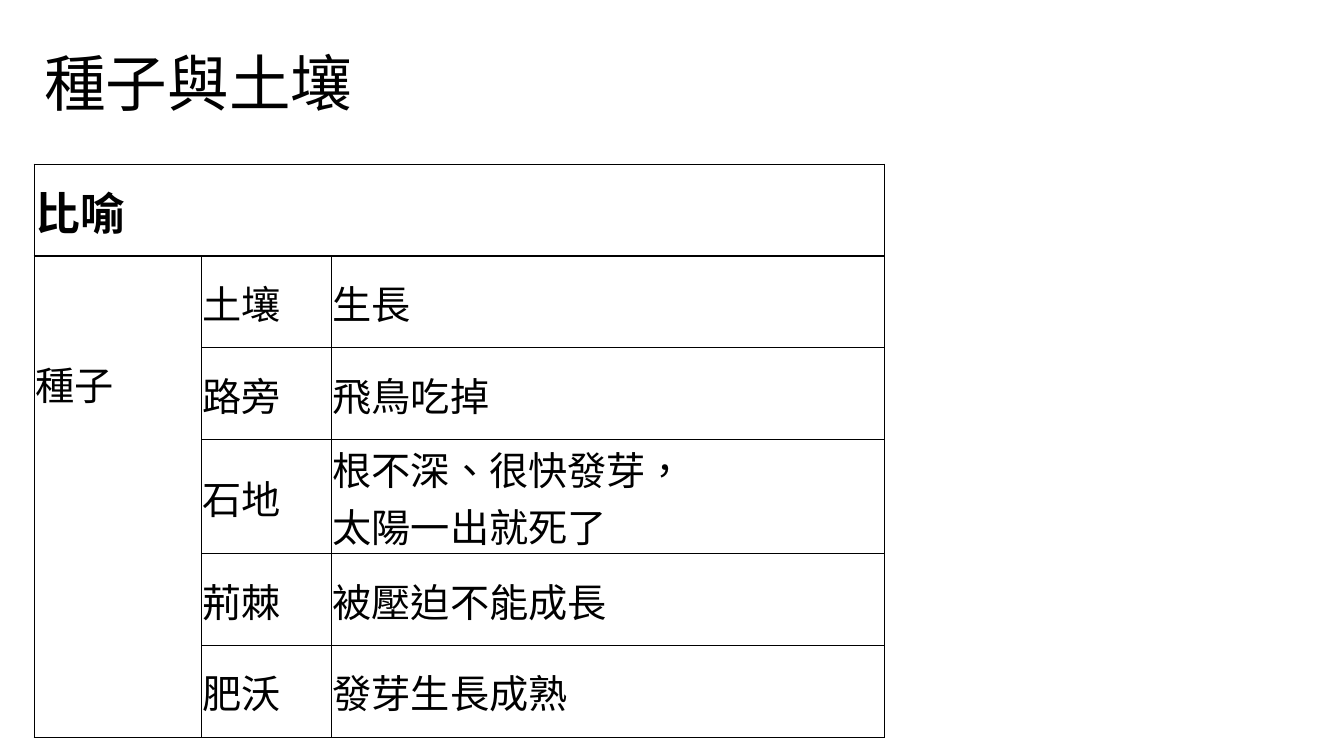
from pptx import Presentation
from pptx.dml.color import RGBColor
from pptx.enum.lang import MSO_LANGUAGE_ID
from pptx.enum.text import MSO_ANCHOR, PP_ALIGN
from pptx.oxml import parse_xml
from pptx.oxml.ns import nsdecls
from pptx.util import Inches, Pt

BLACK = "000000"
COLUMN_WIDTHS = [1.66, 1.29, 5.48]
ROW_HEIGHT = 0.91
SOILS = [
    ("土壤", ["生長"]),
    ("路旁", ["飛鳥吃掉"]),
    ("石地", ["根不深、很快發芽，", "太陽一出就死了"]),
    ("荊棘", ["被壓迫不能成長"]),
    ("肥沃", ["發芽生長成熟"]),
]


def color(hex_value):
    return RGBColor.from_string(hex_value)


def add_run(p, text, size, font="Calibri", bold=False):
    r = p.add_run()
    r.text = text
    r.font.size = Pt(size)
    r.font.name = font
    r.font.bold = bold
    r.font.color.rgb = color(BLACK)
    r.font.language_id = MSO_LANGUAGE_ID.TRADITIONAL_CHINESE


def add_title(s, text):
    title = s.shapes.title
    title.left, title.top = Inches(0.34), Inches(0.4)
    title.width, title.height = Inches(11.5), Inches(0.92)
    tf = title.text_frame
    tf.word_wrap = True
    tf.vertical_anchor = MSO_ANCHOR.MIDDLE
    p = tf.paragraphs[0]
    p.alignment = PP_ALIGN.LEFT
    p.line_spacing = 0.9
    add_run(p, text, 44, "Noto Sans CJK SC")


def format_cell(cell):
    cell.vertical_anchor = MSO_ANCHOR.MIDDLE
    cell.margin_left = cell.margin_right = cell.margin_top = Inches(0.01)
    cell.margin_bottom = 0
    # Borders come before the fill in the cell properties
    tcPr = cell._tc.get_or_add_tcPr()
    for side in ("lnL", "lnR", "lnT", "lnB"):
        tcPr.append(parse_xml(
            f'<a:{side} {nsdecls("a")} w="{Pt(1)}"><a:solidFill>'
            f'<a:srgbClr val="{BLACK}"/></a:solidFill></a:{side}>'))
    cell.fill.background()


def fill_cell(cell, lines, size=28, bold=False):
    tf = cell.text_frame
    for i, line in enumerate(lines):
        p = tf.add_paragraph() if i else tf.paragraphs[0]
        add_run(p, line, size, bold=bold)


def add_parable_table(s):
    rows, cols = len(SOILS) + 1, len(COLUMN_WIDTHS)
    table = s.shapes.add_table(
        rows, cols, Inches(0.34), Inches(1.63),
        Inches(sum(COLUMN_WIDTHS)), Inches(rows * ROW_HEIGHT)).table
    table.first_row = table.horz_banding = False
    for column, width in zip(table.columns, COLUMN_WIDTHS):
        column.width = Inches(width)
    for row in table.rows:
        row.height = Inches(ROW_HEIGHT)
    for cell in table.iter_cells():
        format_cell(cell)

    # Heading across the top
    heading = table.cell(0, 0)
    heading.merge(table.cell(0, cols - 1))
    fill_cell(heading, ["比喻"], 32, bold=True)

    # Seed label beside all the soils
    seed = table.cell(1, 0)
    seed.merge(table.cell(rows - 1, 0))
    seed.vertical_anchor = MSO_ANCHOR.TOP
    seed.margin_top = Inches(0.98)
    fill_cell(seed, ["種子"])

    # Soils and what grows in them
    for i, (soil, growth) in enumerate(SOILS, start=1):
        fill_cell(table.cell(i, 1), [soil])
        fill_cell(table.cell(i, 2), growth)


def main():
    prs = Presentation()
    prs.slide_width, prs.slide_height = Inches(13.33), Inches(7.5)
    s = prs.slides.add_slide(prs.slide_layouts[5])
    add_title(s, "種子與土壤")
    add_parable_table(s)
    prs.save("out.pptx")


if __name__ == "__main__":
    main()
